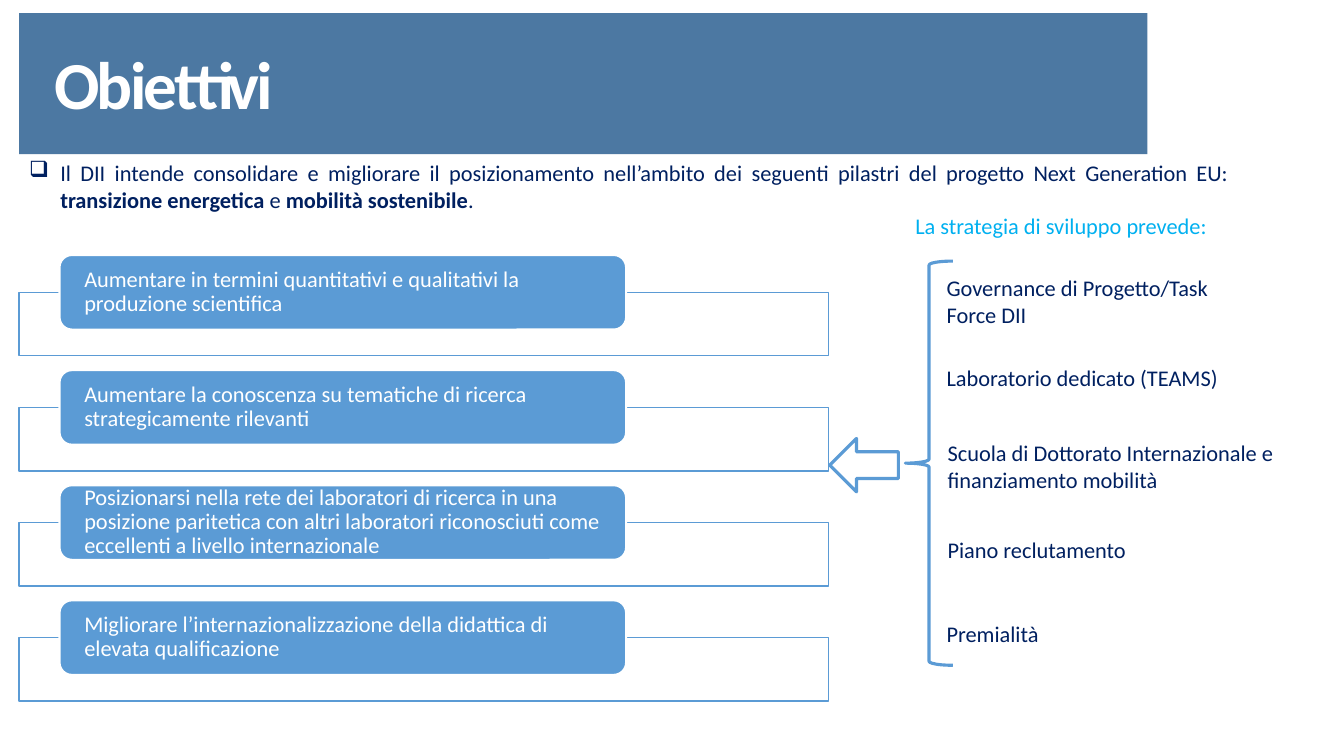
from lxml.etree import SubElement
from pptx import Presentation
from pptx.dml.color import RGBColor
from pptx.enum.shapes import MSO_SHAPE as SHAPE
from pptx.enum.text import MSO_ANCHOR as ANCHOR, MSO_AUTO_SIZE as AUTO, PP_ALIGN as ALIGN
from pptx.oxml.ns import qn
from pptx.util import Inches, Pt

WHITE = RGBColor(0xFF, 0xFF, 0xFF)
BANNER = RGBColor(0x20, 0x57, 0x8B)
BLUE = RGBColor(0x5B, 0x9B, 0xD5)
NAVY = RGBColor(0x00, 0x20, 0x60)
CYAN = RGBColor(0x00, 0xB0, 0xF0)

TITLE = "Obiettivi"
INTRO = [
    ("Il DII intende consolidare e migliorare il posizionamento nell’ambito dei "
     "seguenti pilastri del progetto Next Generation EU: ", False),
    ("transizione energetica", True),
    (" e ", False),
    ("mobilità sostenibile", True),
    (".", False),
]
GOALS = [
    "Aumentare in termini quantitativi e qualitativi la produzione scientifica",
    "Aumentare la conoscenza su tematiche di ricerca strategicamente rilevanti",
    "Posizionarsi nella rete dei laboratori di ricerca in una posizione paritetica "
    "con altri laboratori riconosciuti come eccellenti a livello internazionale",
    "Migliorare l’internazionalizzazione della didattica di elevata qualificazione",
]
STRATEGY_HEADING = "La strategia di sviluppo prevede:"
STRATEGY = [
    ("Governance di Progetto/Task Force DII", (9.29, 2.67, 3.21, 0.64)),
    ("Laboratorio dedicato (TEAMS)", (9.29, 3.56, 3.21, 0.37)),
    ("Scuola di Dottorato Internazionale e finanziamento mobilità", (9.3, 4.31, 3.59, 0.64)),
    ("Piano reclutamento", (9.3, 5.27, 3.59, 0.37)),
    ("Premialità", (9.29, 6.1, 3.43, 0.37)),
]
LEFT, GOAL_TOP, GOAL_PITCH = 0.19, 2.53, 1.142
FRAME_W, FRAME_H, FRAME_DROP = 8.03, 0.63, 0.37
GOAL_INDENT, GOAL_W, GOAL_H = 0.4, 5.62, 0.74

prs = Presentation()
prs.slide_width, prs.slide_height = Inches(13.33), Inches(7.5)
s = prs.slides.add_slide(prs.slide_layouts[6])


def add_shape(kind, box, fill=None, line=None, width=1, opacity=100):
    """Add a preset shape with its fill and outline."""
    sp = s.shapes.add_shape(kind, *map(Inches, box))
    sp.shadow.inherit = False
    if fill is None:
        sp.fill.background()
    else:
        sp.fill.solid()
        sp.fill.fore_color.rgb = fill
        if opacity < 100:
            color = sp.fill._xPr.find(qn("a:solidFill"))[0]
            SubElement(color, qn("a:alpha")).set("val", str(opacity * 1000))
    if line is None:
        sp.line.fill.background()
    else:
        sp.line.color.rgb = line
        sp.line.width = Pt(width)
    return sp


def write(sp, text, size=16, color=NAVY, bold=False, align=ALIGN.LEFT, anchor=ANCHOR.TOP,
          inset=None, after=0, line_spacing=None, tracking=None, bullet=None, indent=0):
    """Write a string or a list of (text, bold) runs as one paragraph."""
    tf = sp.text_frame
    tf.word_wrap = True
    tf.vertical_anchor = anchor
    if inset is not None:
        tf.margin_left = tf.margin_right = Inches(inset)
        tf.margin_top = tf.margin_bottom = 0
    p = tf.paragraphs[0]
    p.alignment = align
    p.space_after = Pt(after)
    if line_spacing:
        p.line_spacing = line_spacing
    if bullet:
        pPr = p._p.get_or_add_pPr()
        pPr.set("marL", str(Inches(indent)))
        pPr.set("indent", str(-Inches(indent)))
        SubElement(pPr, qn("a:buChar")).set("char", bullet)
    for part, heavy in [(text, bold)] if isinstance(text, str) else text:
        r = p.add_run()
        r.text = part
        r.font.name, r.font.size, r.font.bold = "Calibri", Pt(size), heavy
        r.font.color.rgb = color
        if tracking:
            r._r.get_or_add_rPr().set("spc", str(tracking))


def add_text(box, text, **style):
    """Add a text box that grows with its text."""
    sp = s.shapes.add_textbox(*map(Inches, box))
    sp.text_frame.auto_size = AUTO.SHAPE_TO_FIT_TEXT
    write(sp, text, **style)


add_shape(SHAPE.RECTANGLE, (LEFT, 0.13, 11.19, 1.4), BANNER, opacity=80)
add_text((0.54, 0.42, 10.55, 0.81), TITLE, size=48, color=WHITE, bold=True,
         inset=0, after=3, tracking=-210)
add_text((LEFT, 1.53, 12.1, 0.64), INTRO, align=ALIGN.JUSTIFY, after=12,
         bullet="❑", indent=0.31)

for i, goal in enumerate(GOALS):
    top = GOAL_TOP + i * GOAL_PITCH
    add_shape(SHAPE.RECTANGLE, (LEFT, top + FRAME_DROP, FRAME_W, FRAME_H), WHITE, BLUE,
              opacity=90)
    sp = add_shape(SHAPE.ROUNDED_RECTANGLE, (LEFT + GOAL_INDENT, top, GOAL_W, GOAL_H),
                   BLUE, WHITE, 1.5)
    write(sp, goal, color=WHITE, anchor=ANCHOR.MIDDLE, inset=0.21, line_spacing=0.9)

for item, box in STRATEGY:
    add_text(box, item)
add_text((8.98, 2.06, 3.35, 0.37), STRATEGY_HEADING, color=CYAN)
add_shape(SHAPE.LEFT_BRACE, (8.98, 2.59, 0.47, 4.01), line=BLUE, width=2.25)
add_shape(SHAPE.LEFT_ARROW, (8.23, 4.35, 0.68, 0.53), line=BLUE, width=2.25)

prs.save("out.pptx")
